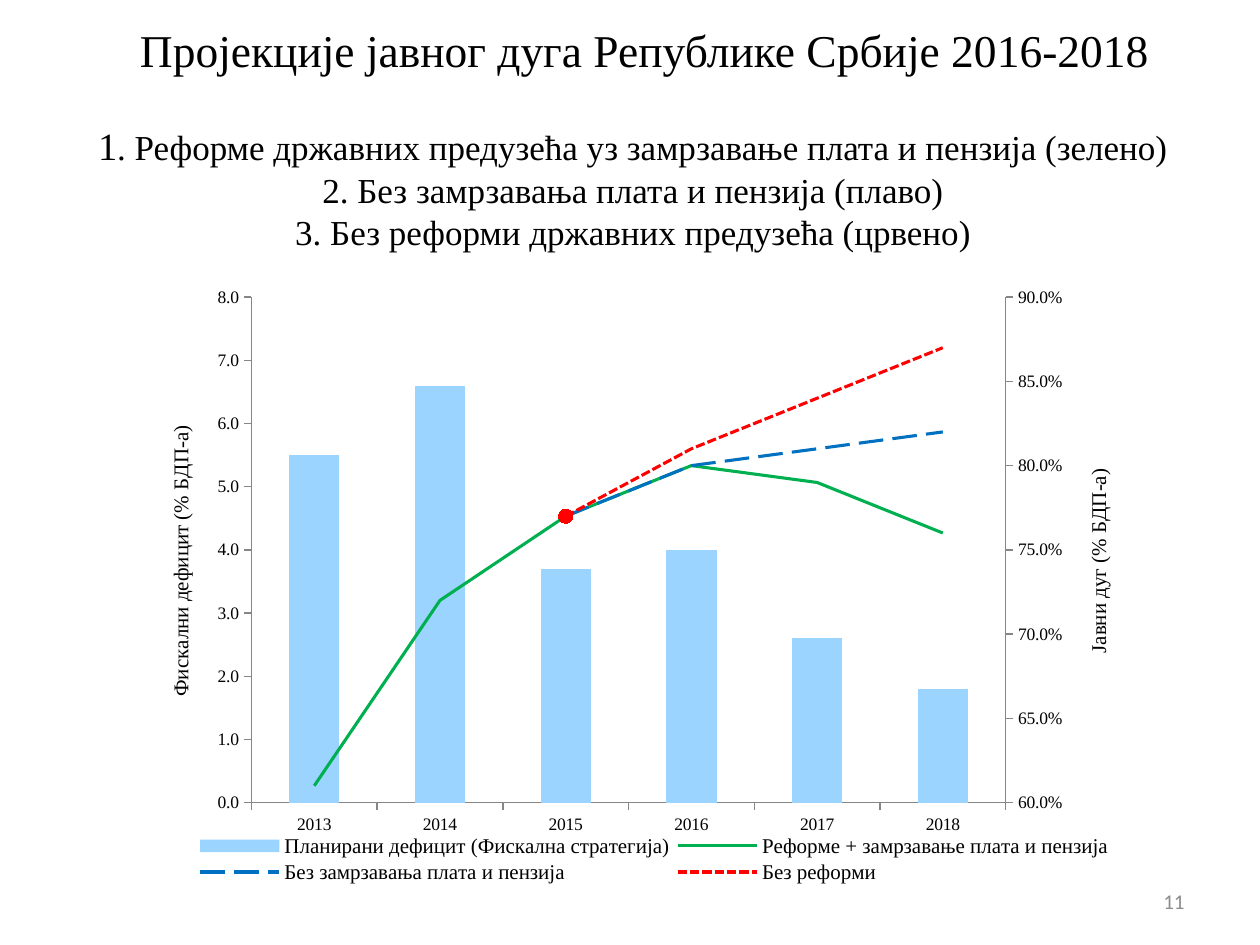
from copy import deepcopy
from dataclasses import dataclass
from typing import Optional

from pptx import Presentation
from pptx.chart.axis import CategoryAxis, ValueAxis
from pptx.chart.data import CategoryChartData
from pptx.dml.color import RGBColor
from pptx.enum.chart import XL_CHART_TYPE, XL_LEGEND_POSITION, XL_MARKER_STYLE, XL_TICK_MARK
from pptx.enum.dml import MSO_LINE
from pptx.enum.text import MSO_ANCHOR, MSO_AUTO_SIZE, PP_ALIGN
from pptx.oxml import parse_xml
from pptx.oxml.ns import nsdecls, qn
from pptx.util import Inches, Pt


@dataclass(frozen=True)
class Theme:
    serif: str = "Times New Roman"
    sans: str = "Calibri"
    ink: str = "000000"
    gray: str = "8C8C8C"
    rule: str = "868686"
    bar: str = "9BD4FF"
    green: str = "00B050"
    blue: str = "0070C0"
    red: str = "FF0000"
    head: int = 26
    lead: int = 22
    body: int = 20
    label: int = 12
    chart: int = 11
    tick: int = 10
    line: float = 1.75


@dataclass(frozen=True)
class Box:
    left: float
    top: float
    width: float
    height: float

    def place(self) -> tuple:
        return (Inches(WIDE * self.left / 100), Inches(HIGH * self.top / 100),
                Inches(WIDE * self.width / 100), Inches(HIGH * self.height / 100))

    def layout(self, inner: bool = False):
        spots = zip("xywh", (self.left, self.top, self.width, self.height))
        sizes = "".join(f'<c:{key} val="{num / 100}"/>' for key, num in spots)
        target = '<c:layoutTarget val="inner"/>' if inner else ""
        return parse_xml(
            f'<c:layout {nsdecls("c")}><c:manualLayout>{target}<c:xMode val="edge"/>'
            f'<c:yMode val="edge"/>{sizes}</c:manualLayout></c:layout>')


@dataclass(frozen=True)
class Trend:
    name: str
    vals: tuple
    color: str
    dash: Optional[MSO_LINE] = None


WIDE, HIGH = 10, 7.5
LOOK = Theme()
HEAD_BOX = Box(2.8, 0, 94.9, 29.07)
PAGE_BOX = Box(71.7, 92.7, 23.3, 5.3)
CHART_BOX = Box(13, 29.07, 75.6, 66.13)
PLOT_BOX = Box(9.2, 3.6, 79.2, 80.9)
KEY_BOX = Box(3, 89, 97, 9)
YEARS = [str(year) for year in range(2013, 2019)]
BARS = Trend("Планирани дефицит (Фискална стратегија)",
             (5.5, 6.6, 3.7, 4, 2.6, 1.8), LOOK.bar)
LINES = (
    Trend("Реформе + замрзавање плата и пензија",
          (0.61, 0.72, 0.77, 0.8, 0.79, 0.76), LOOK.green),
    Trend("Без замрзавања плата и пензија",
          (None, None, 0.77, 0.8, 0.81, 0.82), LOOK.blue, MSO_LINE.LONG_DASH),
    Trend("Без реформи",
          (None, None, 0.77, 0.81, 0.84, 0.87), LOOK.red, MSO_LINE.SQUARE_DOT),
)


def style(font, size: float, color: str = LOOK.ink, face: str = LOOK.serif) -> None:
    font.size, font.name, font.bold = Pt(size), face, False
    font.color.rgb = RGBColor.from_string(color)


def write(para, text: str, align=PP_ALIGN.CENTER, **form) -> None:
    para.alignment = align
    for row, part in enumerate(text.split("\n")):
        if row:
            para.add_line_break()
        run = para.add_run()
        run.text = part
        style(run.font, **form)


def stroke(line, color: str, width: float, dash=None) -> None:
    line.color.rgb = RGBColor.from_string(color)
    line.width = Pt(width)
    if dash is not None:
        line.dash_style = dash


def add_head(slide) -> None:
    head = slide.shapes.title
    head.left, head.top, head.width, head.height = HEAD_BOX.place()
    frame = head.text_frame
    frame.auto_size = MSO_AUTO_SIZE.NONE
    frame.vertical_anchor = MSO_ANCHOR.MIDDLE
    first = frame.paragraphs[0]
    write(first, "Пројекције јавног дуга Републике Србије 2016-2018", size=LOOK.head)
    first._p.get_or_add_pPr().set("indent", str(Inches(0.19)))
    first.space_after = Pt(26)
    rest = frame.add_paragraph()
    write(rest, "1", size=LOOK.lead)
    write(rest, ". Реформе државних предузећа уз замрзавање плата и пензија (зелено)\n"
                "2. Без замрзавања плата и пензија (плаво)\n"
                "3. Без реформи државних предузећа (црвено)", size=LOOK.body)


def add_page(slide) -> None:
    frame = slide.shapes.add_textbox(*PAGE_BOX.place()).text_frame
    frame.word_wrap = True
    frame.vertical_anchor = MSO_ANCHOR.MIDDLE
    write(frame.paragraphs[0], "11", align=PP_ALIGN.RIGHT,
          size=LOOK.label, color=LOOK.gray, face=LOOK.sans)


def split_lines(chart) -> tuple:
    area = chart._chartSpace.find(".//" + qn("c:plotArea"))
    bars, cat, val = (area.find(qn(tag)) for tag in ("c:barChart", "c:catAx", "c:valAx"))
    group = parse_xml(f'<c:lineChart {nsdecls("c")}><c:grouping val="standard"/>'
                      '<c:varyColors val="0"/><c:marker val="1"/>'
                      '<c:axId val="5001"/><c:axId val="5002"/></c:lineChart>')
    for spot, ser in enumerate(bars.findall(qn("c:ser"))[1:], 2):
        for flag in ser.findall(qn("c:invertIfNegative")):
            ser.remove(flag)
        group.insert(spot, ser)
    bars.addnext(group)
    cat_two, val_two = deepcopy(cat), deepcopy(val)
    for axis, own, other in ((cat_two, "5001", "5002"), (val_two, "5002", "5001")):
        axis.find(qn("c:axId")).set("val", own)
        axis.find(qn("c:crossAx")).set("val", other)
    val_two.find(qn("c:axPos")).set("val", "r")
    val_two.find(qn("c:crosses")).set("val", "max")
    val.addnext(val_two)
    val_two.addnext(cat_two)
    CategoryAxis(cat_two).visible = False
    for old in area.findall(qn("c:layout")):
        area.remove(old)
    area.insert(0, PLOT_BOX.layout(inner=True))
    return ValueAxis(val), ValueAxis(val_two)


def dress_axis(axis, title: str = "", code: str = "", span: tuple = ()) -> None:
    axis.has_major_gridlines = False
    axis.major_tick_mark = XL_TICK_MARK.OUTSIDE
    style(axis.tick_labels.font, LOOK.tick)
    stroke(axis.format.line, LOOK.rule, 0.75)
    if span:
        axis.minimum_scale, axis.maximum_scale, axis.major_unit = span
        axis.tick_labels.number_format = code
        axis.tick_labels.number_format_is_linked = False
        write(axis.axis_title.text_frame.paragraphs[0], title, size=LOOK.label)


def dress_line(series, trend: Trend) -> None:
    stroke(series.format.line, trend.color, LOOK.line, trend.dash)
    series.marker.style = XL_MARKER_STYLE.NONE
    series.smooth = False


def add_dot(point) -> None:
    stroke(point.format.line, LOOK.red, LOOK.line)
    dot = point.marker
    dot.style, dot.size = XL_MARKER_STYLE.CIRCLE, 8
    dot.format.fill.solid()
    dot.format.fill.fore_color.rgb = RGBColor.from_string(LOOK.red)
    stroke(dot.format.line, LOOK.red, 0.75)


def add_key(chart) -> None:
    chart.has_legend = True
    key = chart.legend
    key.position = XL_LEGEND_POSITION.BOTTOM
    key.include_in_layout = False
    style(key.font, LOOK.label)
    root = key._element
    for old in root.findall(qn("c:layout")):
        root.remove(old)
    root.find(qn("c:legendPos")).addnext(KEY_BOX.layout())


def add_graph(slide) -> None:
    data = CategoryChartData()
    data.categories = YEARS
    for trend in (BARS, *LINES):
        data.add_series(trend.name, trend.vals)
    chart = slide.shapes.add_chart(
        XL_CHART_TYPE.COLUMN_CLUSTERED, *CHART_BOX.place(), data).chart
    chart.has_title = False
    style(chart.font, LOOK.chart)
    left, right = split_lines(chart)
    dress_axis(chart.category_axis)
    dress_axis(left, "Фискални дефицит (% БДП-а)", "#,##0.0", (0, 8, 1))
    dress_axis(right, "Јавни дуг (% БДП-а)", "0.0%", (0.6, 0.9, 0.05))
    bars, lines = chart.plots
    bars.gap_width = 150
    bars.vary_by_categories = False
    fill = bars.series[0].format.fill
    fill.solid()
    fill.fore_color.rgb = RGBColor.from_string(BARS.color)
    for series, trend in zip(lines.series, LINES):
        dress_line(series, trend)
    add_dot(lines.series[2].points[2])
    add_key(chart)


def main() -> None:
    deck = Presentation()
    deck.slide_width, deck.slide_height = Inches(WIDE), Inches(HIGH)
    slide = deck.slides.add_slide(deck.slide_layouts[5])
    add_head(slide)
    add_page(slide)
    add_graph(slide)
    deck.save("out.pptx")


if __name__ == "__main__":
    main()
